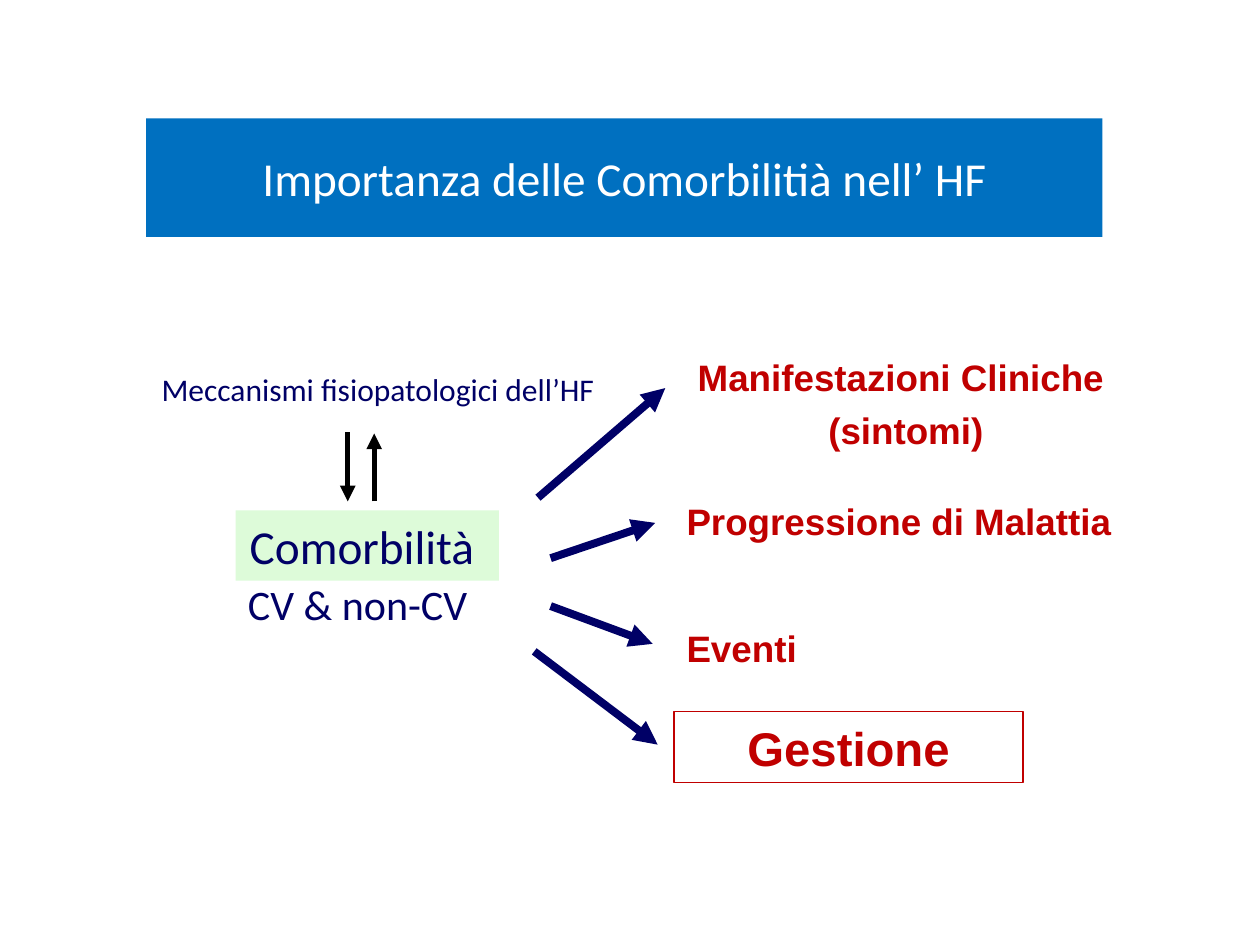
"""Build the slide on the importance of comorbidities in heart failure."""
from dataclasses import dataclass

import pptx
import pptx.dml.color
import pptx.enum.shapes
import pptx.enum.text
import pptx.oxml
import pptx.oxml.ns
import pptx.util
from pptx.util import Inches

LEFT = pptx.enum.text.PP_ALIGN.LEFT
CENTER = pptx.enum.text.PP_ALIGN.CENTER


@dataclass(frozen=True)
class Theme:
    white: str = "FFFFFF"
    blue: str = "0070C0"
    green: str = "DDFBD9"
    navy: str = "000066"
    red: str = "C00000"
    black: str = "000000"
    body_font: str = "Calibri"
    outcome_font: str = "Arial"
    large: int = 27
    medium: int = 24
    outcome: int = 21
    small: int = 18
    paragraph_gap: int = 5
    thick: float = 4.5
    thin: float = 3
    border: float = 0.75


THEME = Theme()

CAUSES = [
    {"lines": ["Importanza delle Comorbilitià nell’ HF"], "box": (1.16, 0.94, 7.59, 0.94),
     "size": THEME.large, "color": THEME.white, "fill": THEME.blue, "wrap": True},
    {"lines": ["Meccanismi fisiopatologici dell’HF"], "box": (1.16, 2.88, 3.68, 0.41),
     "size": THEME.small},
    {"lines": ["Comorbilità "], "box": (1.87, 4.05, 2.09, 0.56),
     "size": THEME.large, "fill": THEME.green},
    {"lines": ["CV & non-CV"], "box": (1.87, 4.54, 2.03, 0.5),
     "size": THEME.medium, "align": LEFT},
]
OUTCOMES = [
    {"lines": ["Manifestazioni Cliniche ", "(sintomi)"], "box": (5.42, 2.76, 3.54, 0.88)},
    {"lines": ["Progressione di Malattia"], "box": (5.35, 3.91, 3.61, 0.45), "align": LEFT},
    {"lines": ["Eventi"], "box": (5.35, 4.92, 1.09, 0.45), "align": LEFT},
    {"lines": ["Gestione"], "box": (5.35, 5.65, 2.77, 0.56),
     "size": THEME.large, "border": THEME.red, "wrap": True},
]
OUTCOME_ARROWS = [
    (4.27, 3.95, 5.28, 3.08),
    (4.37, 4.43, 5.2, 4.15),
    (4.37, 4.81, 5.18, 5.11),
    (4.24, 5.17, 5.22, 5.91),
]
FEEDBACK_ARROWS = [(2.76, 3.43, 2.76, 3.98), (2.97, 3.98, 2.97, 3.44)]


def rgb(color):
    return pptx.dml.color.RGBColor.from_string(color)


def add_label(slide, lines, box, size=THEME.outcome, color=THEME.navy, font=THEME.body_font,
              bold=False, align=CENTER, fill=None, border=None, wrap=False):
    position = [Inches(value) for value in box]
    if fill or border:
        shape = slide.shapes.add_shape(pptx.enum.shapes.MSO_SHAPE.RECTANGLE, *position)
        shape.shadow.inherit = False
    else:
        shape = slide.shapes.add_textbox(*position)
    if fill:
        shape.fill.solid()
        shape.fill.fore_color.rgb = rgb(fill)
    else:
        shape.fill.background()
    if border:
        shape.line.color.rgb = rgb(border)
        shape.line.width = pptx.util.Pt(THEME.border)
    else:
        shape.line.fill.background()

    frame = shape.text_frame
    frame.word_wrap = wrap
    frame.vertical_anchor = pptx.enum.text.MSO_ANCHOR.MIDDLE
    frame.text = "\n".join(lines)
    for index, paragraph in enumerate(frame.paragraphs):
        paragraph.alignment = align
        if index:
            paragraph.space_before = pptx.util.Pt(THEME.paragraph_gap)
        paragraph.font.name = font
        paragraph.font.size = pptx.util.Pt(size)
        paragraph.font.bold = bold
        paragraph.font.color.rgb = rgb(color)


def add_arrow(slide, ends, color, width):
    connector = slide.shapes.add_connector(
        pptx.enum.shapes.MSO_CONNECTOR.STRAIGHT, *[Inches(value) for value in ends])
    connector.line.color.rgb = rgb(color)
    connector.line.width = pptx.util.Pt(width)
    namespace = pptx.oxml.ns.nsdecls("a")
    connector.line._get_or_add_ln().append(
        pptx.oxml.parse_xml(f'<a:tailEnd {namespace} type="triangle"/>'))
    connector._element.spPr.append(pptx.oxml.parse_xml(f"<a:effectLst {namespace}/>"))


def main():
    presentation = pptx.Presentation()
    presentation.slide_width = Inches(10)
    presentation.slide_height = Inches(7.5)
    slide = presentation.slides.add_slide(presentation.slide_layouts[6])
    slide.background.fill.solid()
    slide.background.fill.fore_color.rgb = rgb(THEME.white)

    for label in CAUSES:
        add_label(slide, **label)
    for label in OUTCOMES:
        add_label(slide, color=THEME.red, font=THEME.outcome_font, bold=True, **label)
    for ends in OUTCOME_ARROWS:
        add_arrow(slide, ends, THEME.navy, THEME.thick)
    for ends in FEEDBACK_ARROWS:
        add_arrow(slide, ends, THEME.black, THEME.thin)

    presentation.save("out.pptx")


if __name__ == "__main__":
    main()
